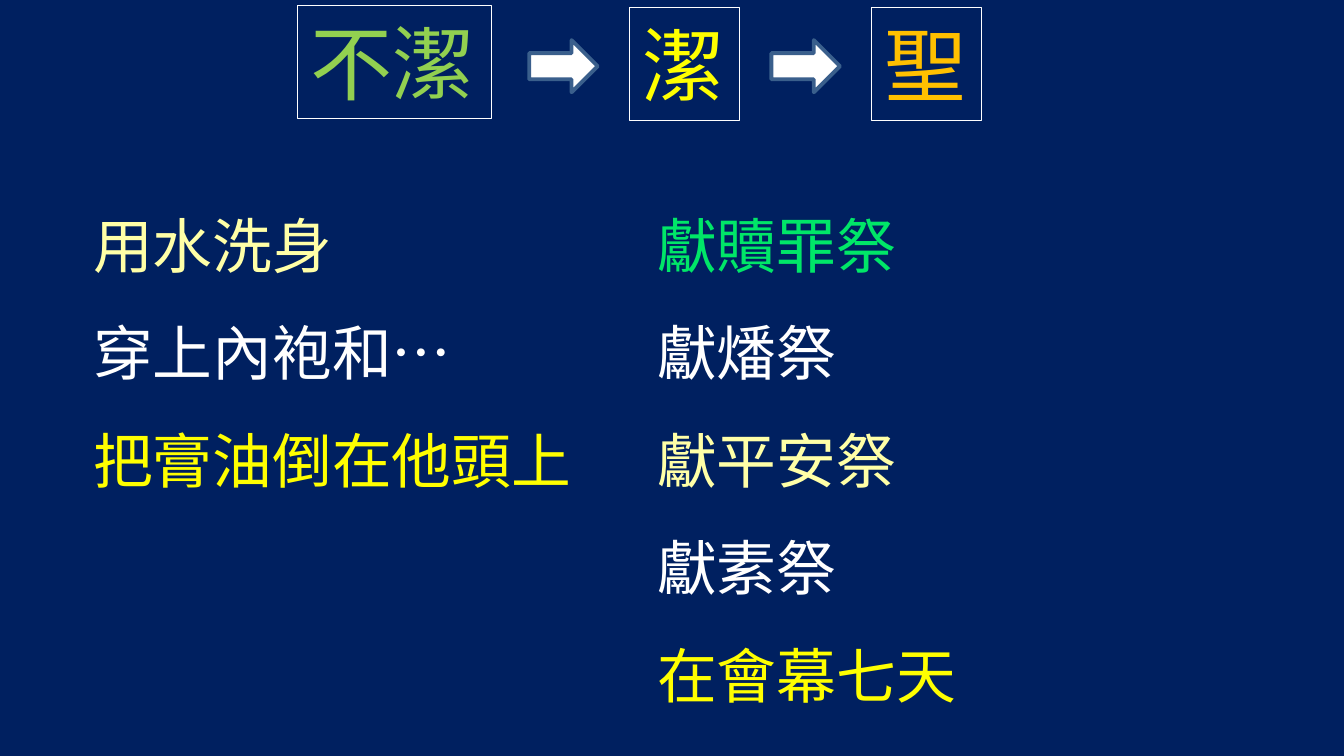
from typing import NamedTuple, Optional

from pptx import Presentation
from pptx import util as u
from pptx.dml import color as col
from pptx.enum import lang as lg, shapes as sh, text as tx

FONT = "Times New Roman"
WHITE, CREAM, YELLOW = "FFFFFF", "FFFFA7", "FFFF00"


class Line(NamedTuple):
    text: str
    hue: str
    lang: Optional[lg.MSO_LANGUAGE_ID] = None


class Stage(NamedTuple):
    line: Line
    left: float
    top: float
    width: float


class Column(NamedTuple):
    left: float
    height: float
    lines: list[Line]


STAGES = [
    Stage(Line("不潔", "92D050"), 159.25, 3, 104.25),
    Stage(Line("潔", YELLOW), 337.25, 4, 59),
    Stage(Line("聖", "FFC000", lg.MSO_LANGUAGE_ID.TRADITIONAL_CHINESE), 467, 4, 59),
]
ARROWS = [283.5, 413.25]
COLUMNS = [
    Column(42.75, 346.5, [
        Line("用水洗身", CREAM),
        Line("穿上內袍和…", WHITE),
        Line("把膏油倒在他頭上", YELLOW),
    ]),
    Column(345, 363.5, [
        Line("獻贖罪祭", "00E668"),
        Line("獻燔祭", WHITE),
        Line("獻平安祭", CREAM),
        Line("獻素祭", WHITE),
        Line("在會幕七天", YELLOW),
    ]),
]


def paint(target, hue: str) -> None:
    target.rgb = col.RGBColor.from_string(hue)


def fill(target, hue: str) -> None:
    target.solid()
    paint(target.fore_color, hue)


def write(para, line: Line, size: float) -> None:
    run = para.add_run()
    run.text = line.text
    run.font.name = FONT
    run.font.size = u.Pt(size)
    if line.lang:
        run.font.language_id = line.lang
    paint(run.font.color, line.hue)


def add_stage(slide, stage: Stage) -> None:
    box = slide.shapes.add_textbox(
        u.Pt(stage.left), u.Pt(stage.top), u.Pt(stage.width), u.Pt(60.5))
    paint(box.line.color, WHITE)
    box.line.width = u.Pt(0.75)
    frame = box.text_frame
    frame.word_wrap = True
    frame.auto_size = tx.MSO_AUTO_SIZE.SHAPE_TO_FIT_TEXT
    write(frame.paragraphs[0], stage.line, 44)


def add_arrow(slide, left: float) -> None:
    arrow = slide.shapes.add_shape(
        sh.MSO_SHAPE.RIGHT_ARROW, u.Pt(left), u.Pt(21.5), u.Pt(36.75), u.Pt(28))
    arrow.shadow.inherit = False
    fill(arrow.fill, WHITE)
    paint(arrow.line.color, "3A5F8C")
    arrow.line.width = u.Pt(2)


def add_column(slide, column: Column) -> None:
    box = slide.shapes.add_textbox(
        u.Pt(column.left), u.Pt(89), u.Pt(303), u.Pt(column.height))
    frame = box.text_frame
    frame.word_wrap = True
    for num, line in enumerate(column.lines):
        para = frame.add_paragraph() if num else frame.paragraphs[0]
        para.line_spacing = 1.5
        write(para, line, 32)


def main() -> None:
    deck = Presentation()
    deck.slide_width, deck.slide_height = u.Pt(720), u.Pt(405)
    slide = deck.slides.add_slide(deck.slide_layouts[6])
    fill(slide.background.fill, "002060")

    # Stages from unclean to holy, with arrows between
    for stage in STAGES:
        add_stage(slide, stage)
    for left in ARROWS:
        add_arrow(slide, left)

    # Steps in two columns
    for column in COLUMNS:
        add_column(slide, column)

    deck.save("out.pptx")


if __name__ == "__main__":
    main()
